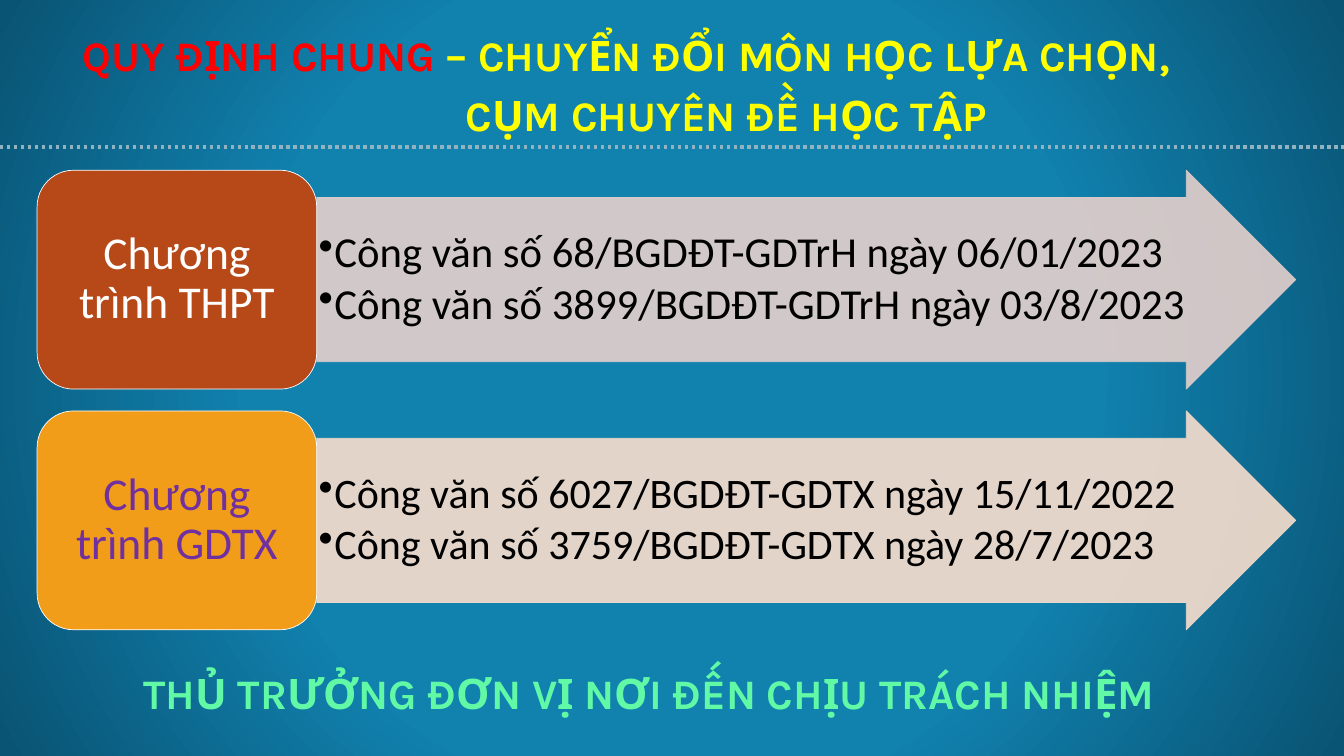
from lxml.etree import SubElement
from pptx import Presentation
from pptx.dml.color import RGBColor
from pptx.enum.dml import MSO_LINE
from pptx.enum.shapes import MSO_CONNECTOR, MSO_SHAPE
from pptx.enum.text import MSO_ANCHOR, PP_ALIGN
from pptx.oxml import parse_xml
from pptx.oxml.ns import nsdecls, qn
from pptx.util import Cm, Pt

RED = RGBColor(0xFF, 0x00, 0x00)
YELLOW = RGBColor(0xFF, 0xFF, 0x00)
MINT = RGBColor(0x61, 0xF9, 0xA6)
BLACK = RGBColor(0x00, 0x00, 0x00)
WHITE = RGBColor(0xFF, 0xFF, 0xFF)
PURPLE = RGBColor(0x70, 0x30, 0xA0)
RUST = RGBColor(0xB7, 0x49, 0x19)
AMBER = RGBColor(0xF1, 0x9D, 0x19)
ROSE = RGBColor(0xE6, 0xD0, 0xCC)
PEACH = RGBColor(0xF9, 0xDE, 0xCD)
DOTS = RGBColor(0x91, 0xB3, 0xC1)
SEA = RGBColor(0x11, 0x81, 0xAE)
DEEP = RGBColor(0x09, 0x54, 0x74)


def add_text(lines, box, size, font="Calibri", bold=False, align=PP_ALIGN.LEFT,
             before=0, after=0, inset=(0.25, 0.13), indents=(0, 0), bullet=False):
    """Each line is a list of (text, colour) runs; box and indents are in cm."""
    frame = slide.shapes.add_textbox(*map(Cm, box)).text_frame
    frame.word_wrap = True
    frame.vertical_anchor = MSO_ANCHOR.MIDDLE
    frame.margin_left = frame.margin_right = Cm(inset[0])
    frame.margin_top = frame.margin_bottom = Cm(inset[1])
    for i, (line, indent) in enumerate(zip(lines, indents)):
        para = frame.add_paragraph() if i else frame.paragraphs[0]
        para.alignment = align
        para.line_spacing = 0.9
        para.space_before, para.space_after = Pt(before), Pt(after)
        props = para._p.get_or_add_pPr()
        props.set("marL", str(Cm(indent)))
        if bullet:
            props.set("indent", str(-Cm(indent)))
            SubElement(props, qn("a:buChar"), char="•")
        for words, color in line:
            run = para.add_run()
            run.text = words
            run.font.size, run.font.name, run.font.bold = Pt(size), font, bold
            run.font.color.rgb = color


def add_block(kind, box, color, edge, alpha=None):
    shape = slide.shapes.add_shape(kind, *map(Cm, box))
    shape.shadow.inherit = False
    shape.fill.solid()
    shape.fill.fore_color.rgb = color
    shape.line.color.rgb = edge
    shape.line.width = Pt(1)
    if alpha:
        for tint in shape._element.spPr.iter(qn("a:srgbClr")):
            SubElement(tint, qn("a:alpha"), val=str(alpha * 1000))
    return shape


deck = Presentation()
deck.slide_width, deck.slide_height = Cm(67.72), Cm(38.1)
slide = deck.slides.add_slide(deck.slide_layouts[6])

# Radial background, darker towards the corners
back = slide.background.fill
back.gradient()
grad = slide._element.cSld.find(".//" + qn("a:gradFill"))
stops = "".join(f'<a:gs pos="{pos}000"><a:srgbClr val="{color}"/></a:gs>'
                for pos, color in ((0, SEA), (55, SEA), (99, DEEP)))
grad.getparent().replace(grad, parse_xml(
    f'<a:gradFill {nsdecls("a")} rotWithShape="1"><a:gsLst>{stops}</a:gsLst>'
    '<a:path path="circle"><a:fillToRect l="50000" t="50000" r="50000" b="50000"/>'
    '</a:path></a:gradFill>'))

# Heading and dotted rule
rule = slide.shapes.add_connector(MSO_CONNECTOR.STRAIGHT, 0, Cm(7.42), Cm(67.7), Cm(7.42))
rule.line.color.rgb = DOTS
rule.line.width = Pt(5)
rule.line.dash_style = MSO_LINE.ROUND_DOT
SubElement(rule._element.spPr, qn("a:effectLst"))

add_text([[("QUY ĐỊNH CHUNG ", RED), ("– CHUYỂN ĐỔI MÔN HỌC LỰA CHỌN,", YELLOW)],
          [("CỤM CHUYÊN ĐỀ HỌC TẬP", YELLOW)]],
         (3.91, 2.18, 60.02, 4.5), 60, font="Karla", bold=True, before=20,
         indents=(0, 19.3))

# One row per programme: label on the left, documents in the arrow
rows = [
    ("Chương trình THPT", WHITE, RUST, ROSE, 61,
     ["Công văn số 68/BGDĐT-GDTrH ngày 06/01/2023",
      "Công văn số 3899/BGDĐT-GDTrH ngày 03/8/2023"]),
    ("Chương trình GDTX", PURPLE, AMBER, PEACH, 60,
     ["Công văn số 6027/BGDĐT-GDTX ngày 15/11/2022",
      "Công văn số 3759/BGDĐT-GDTX ngày 28/7/2023"]),
]
TOP, STEP, HIGH = 8.58, 12.13, 11.03
for i, (label, ink, color, pale, size, papers) in enumerate(rows):
    y = TOP + i * STEP
    arrow = add_block(MSO_SHAPE.RIGHT_ARROW, (15.96, y, 49.33, HIGH), pale, pale, alpha=90)
    arrow.adjustments[0], arrow.adjustments[1] = 0.75, 0.5
    add_text([[(paper, BLACK)] for paper in papers],
             (15.96, y + HIGH / 8, 45.19, HIGH * 0.75), size, after=9,
             inset=(0.1, 0.1), indents=(0.79, 0.79), bullet=True)
    add_block(MSO_SHAPE.ROUNDED_RECTANGLE, (1.87, y, 14.09, HIGH), color, WHITE)
    add_text([[(label, ink)]], (2.41, y + 0.54, 13.01, HIGH - 1.08), 65,
             align=PP_ALIGN.CENTER, inset=(0.69, 0.34))

# Closing line
add_text([[("THỦ TRƯỞNG ĐƠN VỊ NƠI ĐẾN CHỊU TRÁCH NHIỆM", MINT)]],
         (6.98, 32.84, 57.84, 4.5), 60, font="Karla", bold=True, before=20)

deck.save("out.pptx")
